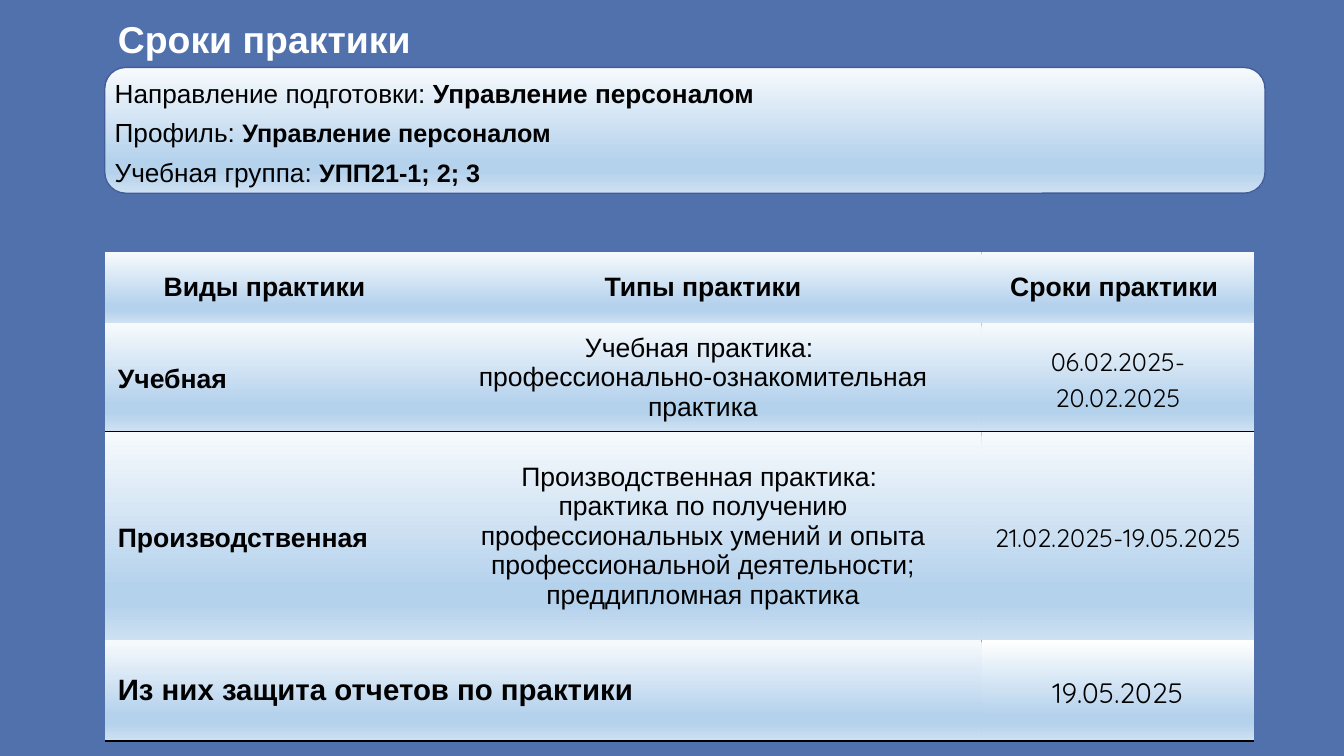
"""Build the slide with the practice dates."""
from pptx import Presentation
from pptx.dml.color import RGBColor
from pptx.enum.shapes import MSO_SHAPE
from pptx.enum.text import MSO_ANCHOR, PP_ALIGN
from pptx.oxml import parse_xml
from pptx.oxml.ns import nsdecls
from pptx.util import Cm, Pt

ROUND = MSO_SHAPE.ROUNDED_RECTANGLE
MIDDLE, TOP = MSO_ANCHOR.MIDDLE, MSO_ANCHOR.TOP
LEFT, CENTER = PP_ALIGN.LEFT, PP_ALIGN.CENTER

BLUE = RGBColor(0x51, 0x71, 0xAC)
EDGE = RGBColor(0x43, 0x5D, 0x9A)
PALE = RGBColor(0xF7, 0xFA, 0xFD)
SKY = RGBColor(0xB5, 0xD2, 0xEC)
MIST = RGBColor(0xCE, 0xE1, 0xF2)
WHITE = RGBColor(0xFF, 0xFF, 0xFF)
BLACK = RGBColor(0, 0, 0)

BOLD = {"name": "Arial", "size": Pt(19), "bold": True}
PLAIN = BOLD | {"bold": False}
DATE = {"name": "Quicksand", "size": Pt(18), "bold": False}
WIDE = dict.fromkeys(("margin_left", "margin_right", "margin_top", "margin_bottom"), Cm(0.33))
TIGHT = {"margin_left": Cm(0.25), "margin_right": Cm(0.25), "margin_top": 0, "margin_bottom": 0}

STYLES = {
    "head": (BOLD, WIDE, {"alignment": CENTER}),
    "kind": (BOLD, WIDE, {"alignment": LEFT, "line_spacing": 1.14}),
    "type": (PLAIN, TIGHT, {"alignment": CENTER}),
    "date": (DATE, WIDE, {"alignment": CENTER, "line_spacing": 1.14}),
    "total": (BOLD | {"size": Pt(21)}, WIDE, {"alignment": LEFT}),
    "final": (DATE | {"size": Pt(20)}, TIGHT, {"alignment": CENTER, "line_spacing": 1.14}),
}


def shade(first):
    """Return a downward gradient fill that starts with the given colour."""
    stops = "".join(
        f'<a:gs pos="{pos * 1000}"><a:srgbClr val="{tint}"/></a:gs>'
        for pos, tint in ((0, first), (74, SKY), (83, SKY), (100, MIST)))
    return parse_xml(f'<a:gradFill {nsdecls("a")} rotWithShape="1"><a:gsLst>{stops}</a:gsLst>'
                     '<a:lin ang="5400000" scaled="0"/></a:gradFill>')


def add_text(para, text, font, tint=BLACK):
    """Add a run with the given font values."""
    run = para.add_run()
    run.text = text
    for key, value in font.items():
        setattr(run.font, key, value)
    run.font.color.rgb = tint


deck = Presentation()
deck.slide_width, deck.slide_height = Cm(33.87), Cm(19.05)
slide = deck.slides.add_slide(deck.slide_layouts[6])
slide.background.fill.solid()
slide.background.fill.fore_color.rgb = BLUE
shapes = slide.shapes

panel = shapes.add_shape(ROUND, Cm(2.64), Cm(1.7), Cm(29.24), Cm(3.17))
panel.shadow.inherit = False
panel.line.color.rgb = EDGE
panel.line.width = Pt(1)
panel._element.spPr.insert(2, shade(PALE))

title = shapes.add_textbox(Cm(2.64), Cm(-0.3), Cm(28.52), Cm(2.26)).text_frame
for key, value in (WIDE | {"word_wrap": True, "vertical_anchor": MIDDLE}).items():
    setattr(title, key, value)
title.paragraphs[0].line_spacing = 1.25
add_text(title.paragraphs[0], "Сроки практики", BOLD | {"size": Pt(26.7)}, WHITE)

group = shapes.add_textbox(Cm(2.64), Cm(1.63), Cm(29.24), Cm(3.25)).text_frame
group.word_wrap = True
group.vertical_anchor = TOP
FACTS = (("Направление подготовки: ", "Управление персоналом", 18.7),
         ("Профиль: ", "Управление персоналом", 18),
         ("Учебная группа: ", "УПП21-1; 2; 3", 18))
for i, (label, fact, size) in enumerate(FACTS):
    para = group.paragraphs[0] if i == 0 else group.add_paragraph()
    para.line_spacing = 1.25
    add_text(para, label, PLAIN | {"size": Pt(18.7)})
    add_text(para, fact, BOLD | {"size": Pt(size)})

ROWS = (
    (("head", "Виды практики"), ("head", "Типы практики"), ("head", "Сроки практики ")),
    (("kind", "Учебная"),
     ("type", "Учебная практика: \nпрофессионально-ознакомительная практика"),
     ("date", "06.02.2025-20.02.2025")),
    (("kind", "Производственная"),
     ("type", "Производственная практика: \nпрактика по получению профессиональных умений и опыта "
              "профессиональной деятельности;\nпреддипломная практика"),
     ("date", "21.02.2025-19.05.2025")),
)
LAST = ((("total", "Из них защита отчетов по практики"), ("final", "19.05.2025")),)
TABLES = (
    (6.35, (8.05, 14.05, 6.86), (1.8, 2.72, 5.28), ROWS),
    (16.13, (22.1, 6.86), (2.54,), LAST),
)
for top, widths, heights, rows in TABLES:
    grid = shapes.add_table(len(rows), len(widths), Cm(2.64), Cm(top),
                            Cm(sum(widths)), Cm(sum(heights))).table
    grid.first_row = grid.horz_banding = False
    for col, width in zip(grid.columns, widths):
        col.width = Cm(width)
    for r, (row, height) in enumerate(zip(rows, heights)):
        grid.rows[r].height = Cm(height)
        for c, (style, text) in enumerate(row):
            cell = grid.cell(r, c)
            font, inset, layout = STYLES[style]
            for key, value in (inset | {"vertical_anchor": MIDDLE}).items():
                setattr(cell, key, value)
            for i, line in enumerate(text.split("\n")):
                frame = cell.text_frame
                para = frame.paragraphs[0] if i == 0 else frame.add_paragraph()
                for key, value in layout.items():
                    setattr(para, key, value)
                add_text(para, line, font)
            props = cell._tc.get_or_add_tcPr()
            ruled = {"T": r > 1, "B": style != "head"}
            for side in "LRTB":
                ink = (f'<a:solidFill><a:srgbClr val="{BLACK}"/></a:solidFill>'
                       if ruled.get(side) else "<a:noFill/>")
                props.append(parse_xml(f'<a:ln{side} {nsdecls("a")} w="12700">{ink}</a:ln{side}>'))
            props.append(shade(WHITE if style == "final" else PALE))

deck.save("out.pptx")
